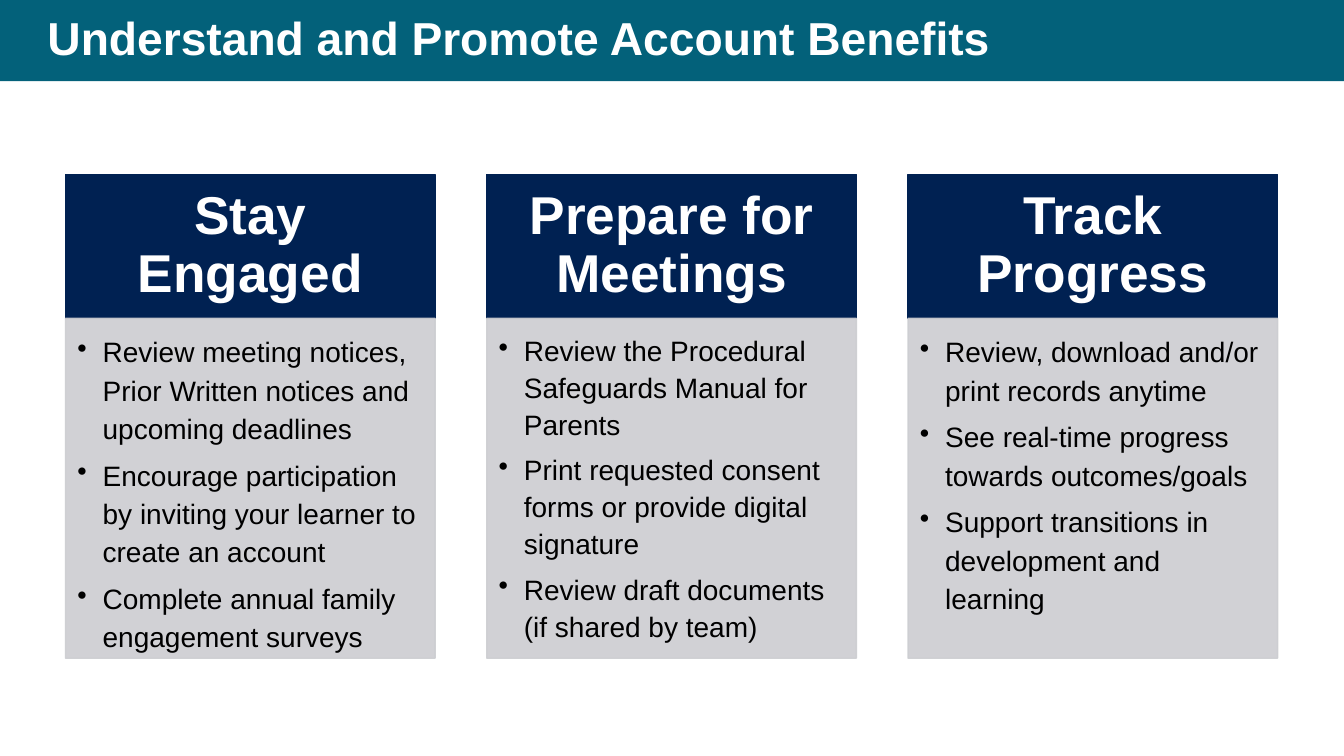
from dataclasses import dataclass

from lxml import etree
from pptx import Presentation
from pptx.dml.color import RGBColor
from pptx.enum.shapes import MSO_SHAPE
from pptx.enum.text import MSO_ANCHOR, PP_ALIGN
from pptx.oxml.ns import qn
from pptx.util import Pt

RECT = MSO_SHAPE.RECTANGLE
TOP, MIDDLE = MSO_ANCHOR.TOP, MSO_ANCHOR.MIDDLE
LEFT, CENTER = PP_ALIGN.LEFT, PP_ALIGN.CENTER


@dataclass(frozen=True)
class Theme:
    font: str = "Arial"
    teal: str = "03617A"
    navy: str = "002152"
    gray: str = "CCCDD1"
    white: str = "FFFFFF"
    black: str = "000000"
    title: float = 33
    head: float = 38
    body: float = 20


def write(shape, lines, size, color, font, bold=False, align=LEFT, anchor=TOP,
          inset=(7.2, 3.6, 7.2, 3.6), spacing=0.9, after=0, indent=0):
    """Fill a shape with paragraphs; a positive indent makes them bullets."""
    frame = shape.text_frame
    frame.word_wrap = True
    frame.vertical_anchor = anchor
    (frame.margin_left, frame.margin_top,
     frame.margin_right, frame.margin_bottom) = map(Pt, inset)
    for i, line in enumerate(lines):
        para = frame.add_paragraph() if i else frame.paragraphs[0]
        para.alignment = align
        para.line_spacing = spacing
        para.space_after = Pt(after)
        if indent:
            props = para._p.get_or_add_pPr()
            props.set("marL", str(Pt(indent)))
            props.set("indent", str(-Pt(indent)))
            etree.SubElement(props, qn("a:buChar"), char="•")
        run = para.add_run()
        run.text = line
        run.font.name = font
        run.font.size = Pt(size)
        run.font.bold = bold
        run.font.color.rgb = RGBColor.from_string(color)


class Deck:
    def __init__(self, theme):
        self.theme = theme
        self.file = Presentation()
        self.file.slide_width, self.file.slide_height = Pt(960), Pt(540)
        self.slide = self.file.slides.add_slide(self.file.slide_layouts[6])

    def block(self, x, y, w, h, color, alpha=100, line=True):
        shape = self.slide.shapes.add_shape(RECT, Pt(x), Pt(y), Pt(w), Pt(h))
        shape.shadow.inherit = False
        fills = [shape.fill]
        if line:
            shape.line.width = Pt(1)
            fills.append(shape.line.fill)
        else:
            shape.line.fill.background()
        for fill in fills:
            fill.solid()
            fill.fore_color.rgb = RGBColor.from_string(color)
        if alpha < 100:
            for tint in shape._element.spPr.iter(qn("a:srgbClr")):
                etree.SubElement(tint, qn("a:alpha"), val=str(alpha * 1000))
        return shape

    def title(self, text):
        look = self.theme
        self.block(0, 0, 960, 58, look.teal, line=False)
        box = self.slide.shapes.add_textbox(Pt(26.8), 0, Pt(887), Pt(58))
        write(box, [text], look.title, look.white, look.font, bold=True,
              anchor=MIDDLE)

    def card(self, x, head, items, spacing):
        look = self.theme
        wide, top, high = 264, 124.6, 102.8
        box = self.block(x, top, wide, high, look.navy)
        write(box, [head], look.head, look.white, look.font, bold=True,
              align=CENTER, anchor=MIDDLE, inset=(21.3, 12.2, 21.3, 12.2))
        box = self.block(x, top + high, wide, 242.8, look.gray, alpha=90)
        write(box, items, look.body, look.black, look.font,
              inset=(8.5, 8.5, 11.4, 12.8), spacing=spacing, after=6,
              indent=18)


# Heading, bullets and line spacing of each card
CARDS = [
    ("Stay Engaged", [
        "Review meeting notices, Prior Written notices and upcoming deadlines",
        "Encourage participation by inviting your learner to create an account",
        "Complete annual family engagement surveys"], 1.14),
    ("Prepare for Meetings", [
        "Review the Procedural Safeguards Manual for Parents",
        "Print requested consent forms or provide digital signature",
        "Review draft documents (if shared by team)"], 1.1),
    ("Track Progress", [
        "Review, download and/or print records anytime",
        "See real-time progress towards outcomes/goals",
        "Support transitions in development and learning"], 1.14),
]


def main():
    deck = Deck(Theme())
    # Title band
    deck.title("Understand and Promote Account Benefits")
    # Three cards at an even step
    for i, (head, items, spacing) in enumerate(CARDS):
        deck.card(46.8 + 300.9 * i, head, items, spacing)
    deck.file.save("out.pptx")


if __name__ == "__main__":
    main()
